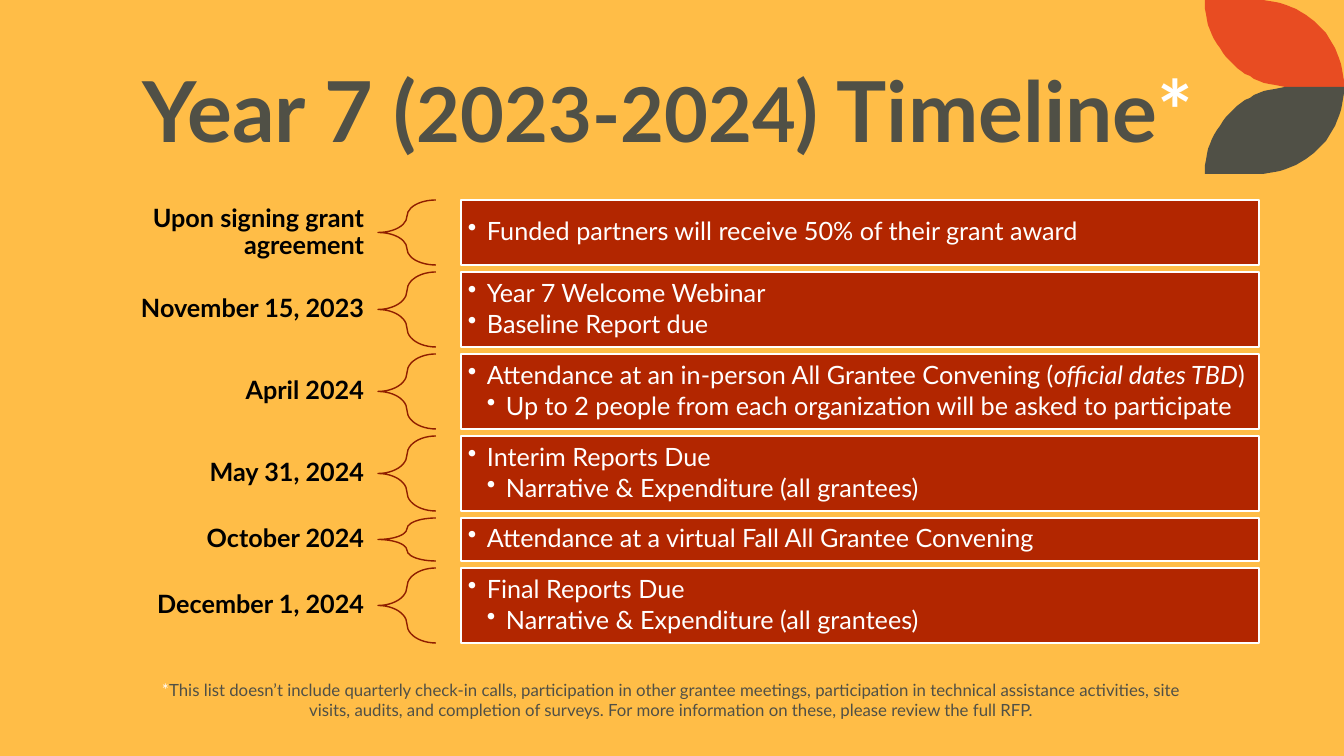
"""Build the Year 7 timeline slide: title, braced date rows, footnote and corner leaves."""
from lxml.etree import SubElement
from pptx import Presentation
from pptx.dml.color import RGBColor
from pptx.enum.shapes import MSO_SHAPE as Shape
from pptx.enum.text import MSO_ANCHOR as Anchor, PP_ALIGN as Align
from pptx.oxml.ns import qn
from pptx.util import Pt

PX = 914400 / 100.8
COLORS = {
    "background": "FFBD47", "orange": "E84C22", "olive": "505046",
    "panel": "B22600", "brace": "8F1E00", "white": "FFFFFF", "black": "000000",
}
ROW_GAP = 7
BULLET_INDENT = 19
ROWS = [
    ("Upon signing grant agreement", 65, [
        (1, ["Funded partners will receive 50% of their grant award"])]),
    ("November 15, 2023", 75, [
        (1, ["Year 7 Welcome Webinar"]),
        (1, ["Baseline Report due"])]),
    ("April 2024", 75, [
        (1, ["Attendance at an in-person All Grantee Convening (", "official dates TBD", ")"]),
        (2, ["Up to 2 people from each organization will be asked to participate"])]),
    ("May 31, 2024", 75, [
        (1, ["Interim Reports Due"]),
        (2, ["Narrative & Expenditure (all grantees)"])]),
    ("October 2024", 43, [
        (1, ["Attendance at a virtual Fall All Grantee Convening"])]),
    ("December 1, 2024", 75, [
        (1, ["Final Reports Due"]),
        (2, ["Narrative & Expenditure (all grantees)"])]),
]


def emu(*lengths):
    return [round(length * PX) for length in lengths]


def write(shape, paragraphs, align, anchor=Anchor.MIDDLE, insets=(10, 5), spacing=0.9, after=0):
    """Fill a shape with (level, runs) paragraphs; a run is (text, size, color, bold, italic)."""
    frame = shape.text_frame
    frame.word_wrap = True
    frame.vertical_anchor = anchor
    frame.margin_left, frame.margin_top = emu(*insets)
    frame.margin_right, frame.margin_bottom = emu(*insets)
    for index, (level, runs) in enumerate(paragraphs):
        paragraph = frame.add_paragraph() if index else frame.paragraphs[0]
        paragraph.alignment = align
        paragraph.line_spacing = spacing
        paragraph.space_after = Pt(after)
        if level:
            margin, indent = emu(BULLET_INDENT * level, -BULLET_INDENT)
            properties = paragraph._p.get_or_add_pPr()
            properties.set("marL", str(margin))
            properties.set("indent", str(indent))
            SubElement(properties, qn("a:buChar")).set("char", "•")
        for text, size, color, bold, italic in runs:
            run = paragraph.add_run()
            run.text = text
            run.font.name = "Lato"
            run.font.size = Pt(size)
            run.font.bold = bold
            run.font.italic = italic
            run.font.color.rgb = RGBColor.from_string(COLORS[color])


presentation = Presentation()
presentation.slide_width, presentation.slide_height = emu(1344, 756)
slide = presentation.slides.add_slide(presentation.slide_layouts[6])
slide.background.fill.solid()
slide.background.fill.fore_color.rgb = RGBColor.from_string(COLORS["background"])
shapes = slide.shapes

leaf_curves = [
    [(1257, 0), (1305, 0), (1344, 38), (1344, 87)],
    [(1291, 87), (1246, 87), (1210, 52), (1205, 9)],
]
leaf_outline = [(1205, 0)]
for curve in leaf_curves:
    for step in range(25):
        t = step / 24
        weights = [(1 - t) ** 3, 3 * t * (1 - t) ** 2, 3 * t ** 2 * (1 - t), t ** 3]
        leaf_outline.append(tuple(
            sum(weight * point[axis] for weight, point in zip(weights, curve)) for axis in (0, 1)))

for color, mirrored in (("orange", False), ("olive", True)):
    points = [(x, 174 - y if mirrored else y) for x, y in leaf_outline]
    builder = shapes.build_freeform(*points[0], scale=PX)
    builder.add_line_segments(points[1:], close=True)
    leaf = builder.convert_to_shape()
    leaf.shadow.inherit = False
    leaf.fill.solid()
    leaf.fill.fore_color.rgb = RGBColor.from_string(COLORS[color])
    leaf.line.fill.background()

title = shapes.add_textbox(*emu(129, 42, 1078, 146))
write(title, [(0, [
    ("Year 7 (", 60, "olive", True, False),
    ("2023-2024", 54, "olive", True, False),
    (") Timeline", 60, "olive", True, False),
    ("*", 60, "white", True, False),
])], Align.CENTER)

top = 200
for date, height, items in ROWS:
    label = shapes.add_textbox(*emu(85, top, 293, height))
    write(label, [(0, [(date, 18, "black", True, False)])], Align.RIGHT, insets=(14, 5), after=6.3)

    brace = shapes.add_shape(Shape.LEFT_BRACE, *emu(378, top, 58, height))
    brace.shadow.inherit = False
    brace.adjustments[0] = 0.35
    brace.fill.background()
    brace.line.color.rgb = RGBColor.from_string(COLORS["brace"])
    brace.line.width = Pt(1)

    panel = shapes.add_shape(Shape.RECTANGLE, *emu(461, top, 798, height))
    panel.shadow.inherit = False
    panel.fill.solid()
    panel.fill.fore_color.rgb = RGBColor.from_string(COLORS["panel"])
    panel.line.color.rgb = RGBColor.from_string(COLORS["white"])
    panel.line.width = Pt(1)
    paragraphs = [
        (level, [(text, 18, "white", False, text == "official dates TBD") for text in texts])
        for level, texts in items
    ]
    write(panel, paragraphs, Align.LEFT, insets=(7, 7), after=2.7)
    top += height + ROW_GAP

footnote = shapes.add_textbox(*emu(140, 675, 1063, 51))
write(footnote, [(0, [
    ("*", 12, "white", False, False),
    ("This list doesn’t include quarterly check-in calls, participation in other grantee meetings, "
     "participation in technical assistance activities, site visits, audits, and completion of "
     "surveys. For more information on these, please review the full RFP.",
     12, "olive", False, False),
])], Align.CENTER, anchor=Anchor.TOP, spacing=1.0)

presentation.save("out.pptx")
